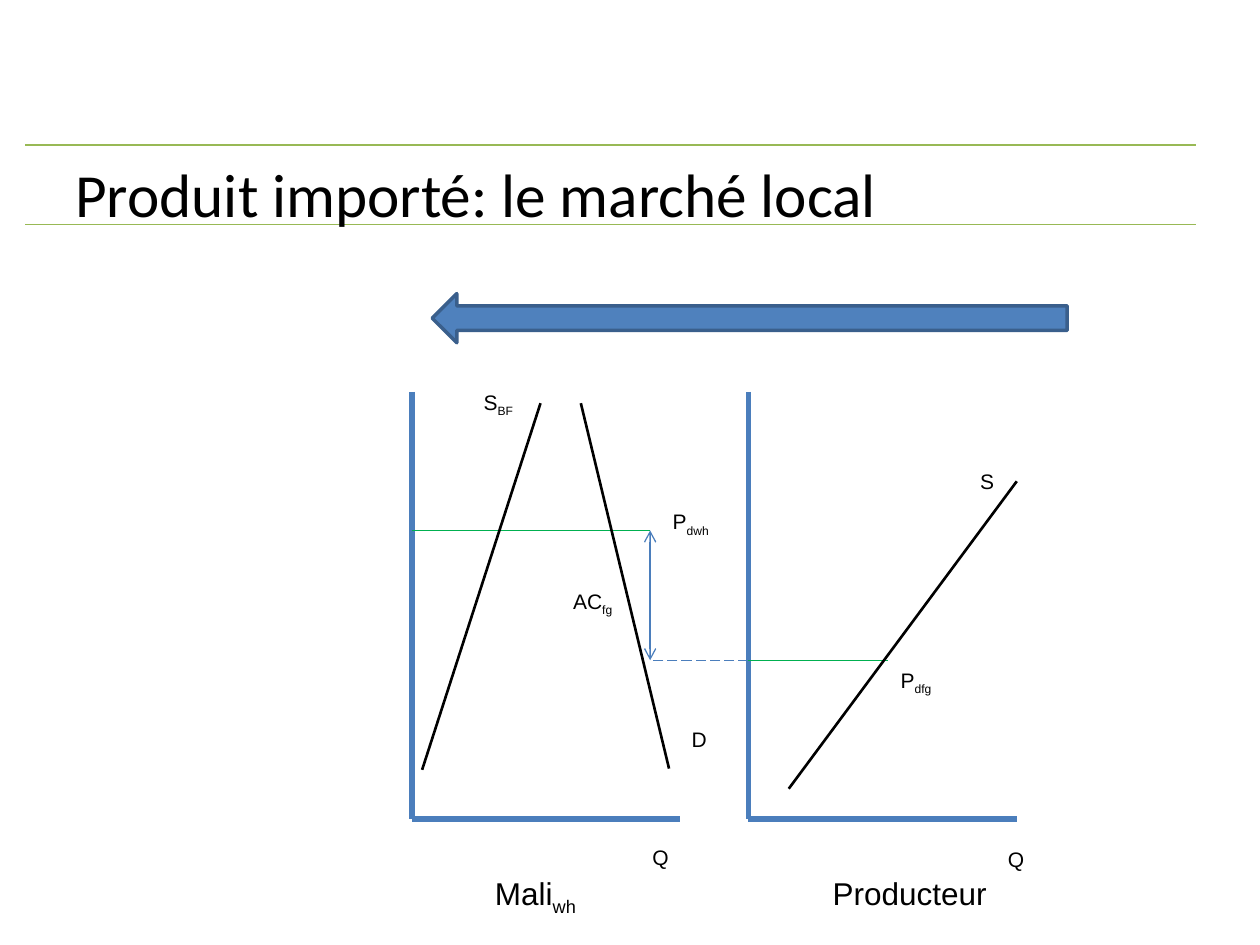
from lxml import etree
from pptx import Presentation, util as u
from pptx.dml.color import RGBColor
from pptx.enum import dml, shapes, text
from pptx.oxml.ns import qn

CELL = u.Inches(0.1)  # grid of 100 columns by 75 rows
COLS, ROWS = 100, 75

BLACK = RGBColor(0x00, 0x00, 0x00)
LIME = RGBColor(0x98, 0xB9, 0x55)
GREEN = RGBColor(0x00, 0xB0, 0x50)
BLUE = RGBColor(0x4B, 0x7E, 0xBC)
FILL = RGBColor(0x4F, 0x81, 0xBD)
EDGE = RGBColor(0x3A, 0x5F, 0x8C)

THIN, CURVE, AXIS = 0.75, 1.5, 3
LEFT, RIGHT = 32.7, 59.4  # columns of the two price axes
TOP, BASE, WIDE = 31.1, 65, 21.3
HIGH, LOW, GAP = 42.1, 52.4, 51.6  # price rows, column of the cost arrow


def grid(*cells):
    return [round(c * CELL) for c in cells]


def apply(item, style):
    for key, val in style.items():
        setattr(item, key, val)


def line(slide, start, end, color, width, dash=None, ends=False):
    """Draw a straight line; ends puts an open arrowhead on both tips."""
    link = slide.shapes.add_connector(
        shapes.MSO_CONNECTOR.STRAIGHT, *grid(*start, *end))
    link.line.color.rgb = color
    apply(link.line, {"width": u.Pt(width), "dash_style": dash})
    props = link._element.spPr
    if ends:
        for tag in ("a:headEnd", "a:tailEnd"):
            etree.SubElement(props.find(qn("a:ln")), qn(tag), type="arrow")
    etree.SubElement(props, qn("a:effectLst"))


def write(slide, box, main, sub="", size=12, font="Arial", **frame):
    """Write a text with an optional subscript."""
    body = slide.shapes.add_textbox(*grid(*box)).text_frame
    apply(body, {"word_wrap": False,
                 "auto_size": text.MSO_AUTO_SIZE.SHAPE_TO_FIT_TEXT, **frame})
    para = body.paragraphs[0]
    for part, base in ((main, None), (sub, "-25000")):
        if not part:
            continue
        run = para.add_run()
        run.text = part
        apply(run.font, {"name": font, "size": u.Pt(size)})
        run.font.color.rgb = BLACK
        if base:
            run._r.get_or_add_rPr().set("baseline", base)


def head(slide):
    for row in (11.5, 17.8):
        line(slide, (2, row), (94.9, row), LIME, THIN)
    write(slide, (5, 11.7, 90, 6.1), "Produit importé: le marché local",
          size=35, font="Calibri", word_wrap=True, margin_top=u.Inches(0.07),
          auto_size=text.MSO_AUTO_SIZE.NONE)


def axes(slide, col):
    line(slide, (col, TOP), (col, BASE), BLUE, AXIS)
    line(slide, (col, BASE), (col + WIDE, BASE), BLUE, AXIS)


def flow(slide):
    arrow = slide.shapes.add_shape(
        shapes.MSO_SHAPE.RIGHT_ARROW, *grid(34.3, 23.3, 50.4, 3.9))
    arrow.rotation = 180
    arrow.shadow.inherit = False
    arrow.fill.solid()
    arrow.fill.fore_color.rgb = FILL
    arrow.line.color.rgb = EDGE
    arrow.line.width = u.Pt(2)


def main():
    deck = Presentation()
    deck.slide_width, deck.slide_height = grid(COLS, ROWS)
    slide = deck.slides.add_slide(deck.slide_layouts[6])

    head(slide)
    for col in (LEFT, RIGHT):
        axes(slide, col)

    line(slide, (LEFT, HIGH), (GAP, HIGH), GREEN, THIN)
    line(slide, (RIGHT, LOW), (70.5, LOW), GREEN, THIN)
    line(slide, (RIGHT, LOW), (GAP, LOW), BLUE, THIN,
         dash=dml.MSO_LINE.LONG_DASH)
    line(slide, (GAP, LOW), (GAP, HIGH), BLUE, THIN, ends=True)

    flow(slide)
    for start, end in (((62.6, 62.6), (80.7, 38.2)),
                       ((46.1, 32), (53.1, 61)),
                       ((33.5, 61.1), (42.9, 32))):
        line(slide, start, end, BLACK, CURVE)

    for col, row, wide, name, sub in (
            (37.4, 30.4, 4.6, "S", "BF"),
            (52.4, 39.9, 5.2, "P", "dwh"),
            (44.5, 46.2, 5.3, "AC", "fg"),
            (70.5, 52.5, 4.7, "P", "dfg"),
            (53.9, 57.2, 3.9, "D", ""),
            (76.8, 36.7, 3.1, "S", ""),
            (50.8, 66.5, 3.3, "Q", ""),
            (79, 66.7, 3.3, "Q", "")):
        write(slide, (col, row, wide, 3), name, sub)

    write(slide, (38.3, 68.9, 8.8, 4), "Mali", "wh", size=18)
    write(slide, (65.1, 68.9, 15.1, 4), "Producteur", size=18)
    deck.save("out.pptx")


if __name__ == "__main__":
    main()
